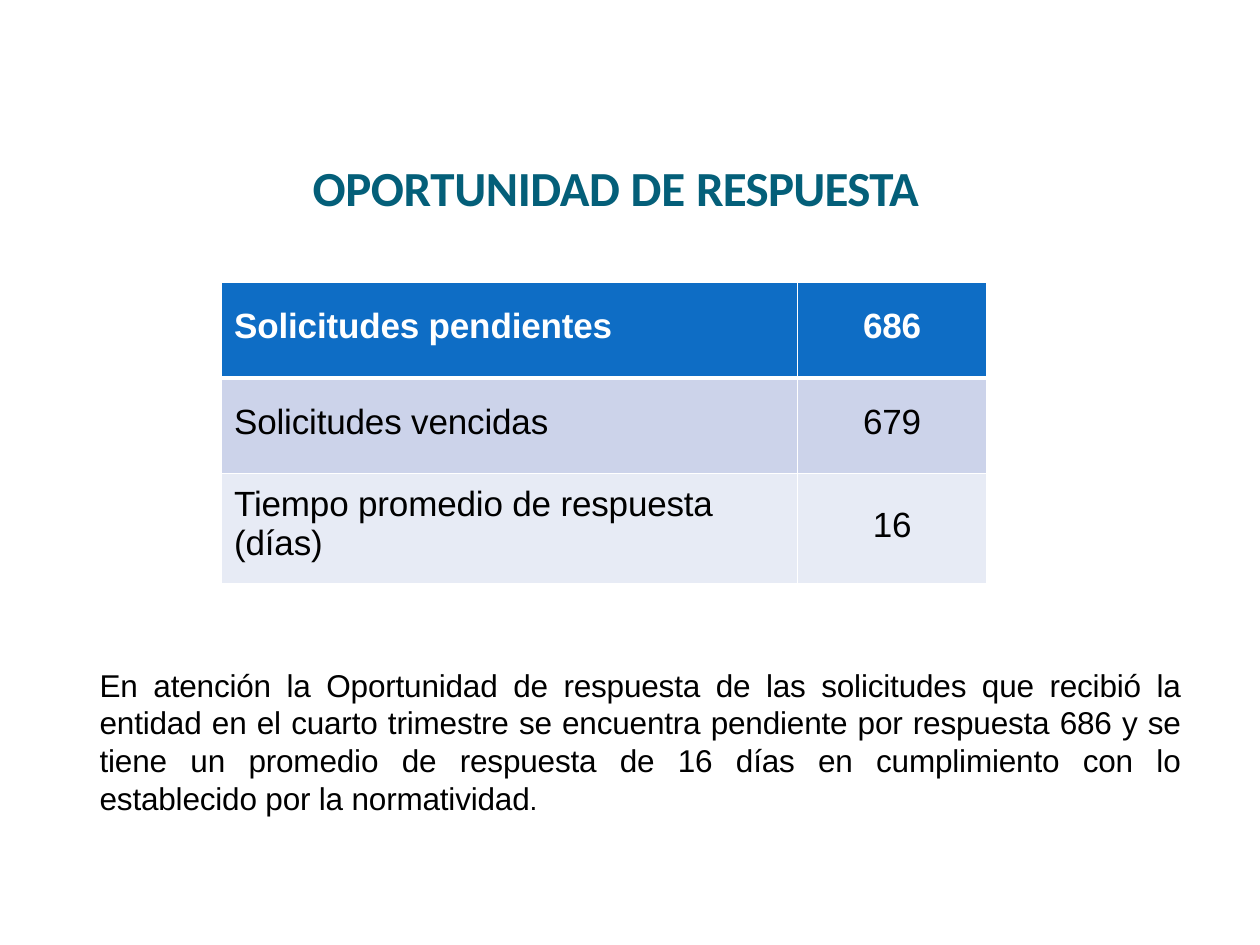
"""Build the slide on response timeliness: a title, a table and a summary."""
from lxml import etree
from pptx import Presentation
from pptx import util as u
from pptx.dml.color import RGBColor
from pptx.enum import text
from pptx.oxml import ns

COLORS = {"title": "045F79", "header": "0E6DC5", "band": "CCD3EA",
          "light": "E7EBF5", "white": "FFFFFF", "black": "000000"}


def write(paragraph, words, color, spacing=-10, **formats):
    """Add a run with its font attributes and letter spacing."""
    run = paragraph.add_run()
    run.text = words
    for name, value in formats.items():
        setattr(run.font, name, value)
    run.font.color.rgb = RGBColor.from_string(COLORS[color])
    run.font._element.set("spc", str(spacing))


def add_border(cell, side, points):
    """Draw a white line on one side of a cell."""
    line = etree.SubElement(cell._tc.get_or_add_tcPr(), ns.qn(f"a:ln{side}"),
                            w=str(u.Pt(points)))
    fill = etree.SubElement(line, ns.qn("a:solidFill"))
    etree.SubElement(fill, ns.qn("a:srgbClr"), val=COLORS["white"])


presentation = Presentation()
presentation.slide_width = u.Cm(25.4)
presentation.slide_height = u.Cm(19.05)
slide = presentation.slides.add_slide(presentation.slide_layouts[5])

title = slide.shapes.title
title_box = {"left": 6.27, "top": 3.15, "width": 12.47, "height": 1.24}
for name, value in title_box.items():
    setattr(title, name, u.Cm(value))
summary = slide.shapes.add_textbox(u.Cm(1.98), u.Cm(13.39), u.Cm(21.82), u.Cm(3.12))

frame_format = {"word_wrap": True, "vertical_anchor": text.MSO_ANCHOR.TOP,
                "auto_size": text.MSO_AUTO_SIZE.SHAPE_TO_FIT_TEXT,
                "margin_left": u.Cm(0.03), "margin_top": u.Cm(0.03),
                "margin_right": 0, "margin_bottom": 0}
for shape in (title, summary):
    for name, value in frame_format.items():
        setattr(shape.text_frame, name, value)

paragraph = title.text_frame.paragraphs[0]
paragraph.alignment = text.PP_ALIGN.LEFT
for words, spacing in (("OPORTUNIDAD ", -20), ("DE ", -10), ("RESPUESTA", -40)):
    write(paragraph, words, "title", spacing, name="Calibri", size=u.Pt(28), bold=True)

rows = [
    ("Solicitudes pendientes", "686", 1.93, "header", "white", 0.5, 0.5, 1, 3),
    ("Solicitudes vencidas", "679", 1.93, "band", "black", 0.5, 0.5, 3, 1),
    ("Tiempo promedio de respuesta (días)", "16", 2.21, "light", "black", 0.23, 0.64, 1, 1),
]
table = slide.shapes.add_table(len(rows), 2, u.Cm(4.47), u.Cm(5.69),
                               u.Cm(15.42), u.Cm(6.07)).table
for column, width in zip(table.columns, (11.61, 3.81)):
    column.width = u.Cm(width)

for row_index, row in enumerate(rows):
    label, number, height, fill, color, label_top, number_top, above, below = row
    table.rows[row_index].height = u.Cm(height)
    columns = ((label, label_top, 0.25, text.PP_ALIGN.LEFT),
               (number, number_top, 0, text.PP_ALIGN.CENTER))
    for column_index, (words, top, left, alignment) in enumerate(columns):
        cell = table.cell(row_index, column_index)
        cell_format = {"margin_left": u.Cm(left), "margin_top": u.Cm(top),
                       "margin_right": 0, "margin_bottom": 0,
                       "vertical_anchor": text.MSO_ANCHOR.TOP}
        for name, value in cell_format.items():
            setattr(cell, name, value)
        for side, points in (("L", 1), ("R", 1), ("T", above), ("B", below)):
            add_border(cell, side, points)
        cell.fill.solid()
        cell.fill.fore_color.rgb = RGBColor.from_string(COLORS[fill])
        paragraph = cell.text_frame.paragraphs[0]
        paragraph.alignment = alignment
        write(paragraph, words, color, name="Arial", size=u.Pt(20), bold=row_index == 0)

paragraph = summary.text_frame.paragraphs[0]
paragraph.alignment = text.PP_ALIGN.JUSTIFY
sentence = ("En atención la Oportunidad de respuesta de las solicitudes que recibió la "
            "entidad en el cuarto trimestre se encuentra pendiente por respuesta 686 y "
            "se tiene un promedio de respuesta de 16 días en cumplimiento con lo "
            "establecido por la normatividad")
for words, size in ((sentence, 18), (".", 16)):
    write(paragraph, words, "black", name="Arial", size=u.Pt(size))

presentation.save("out.pptx")
